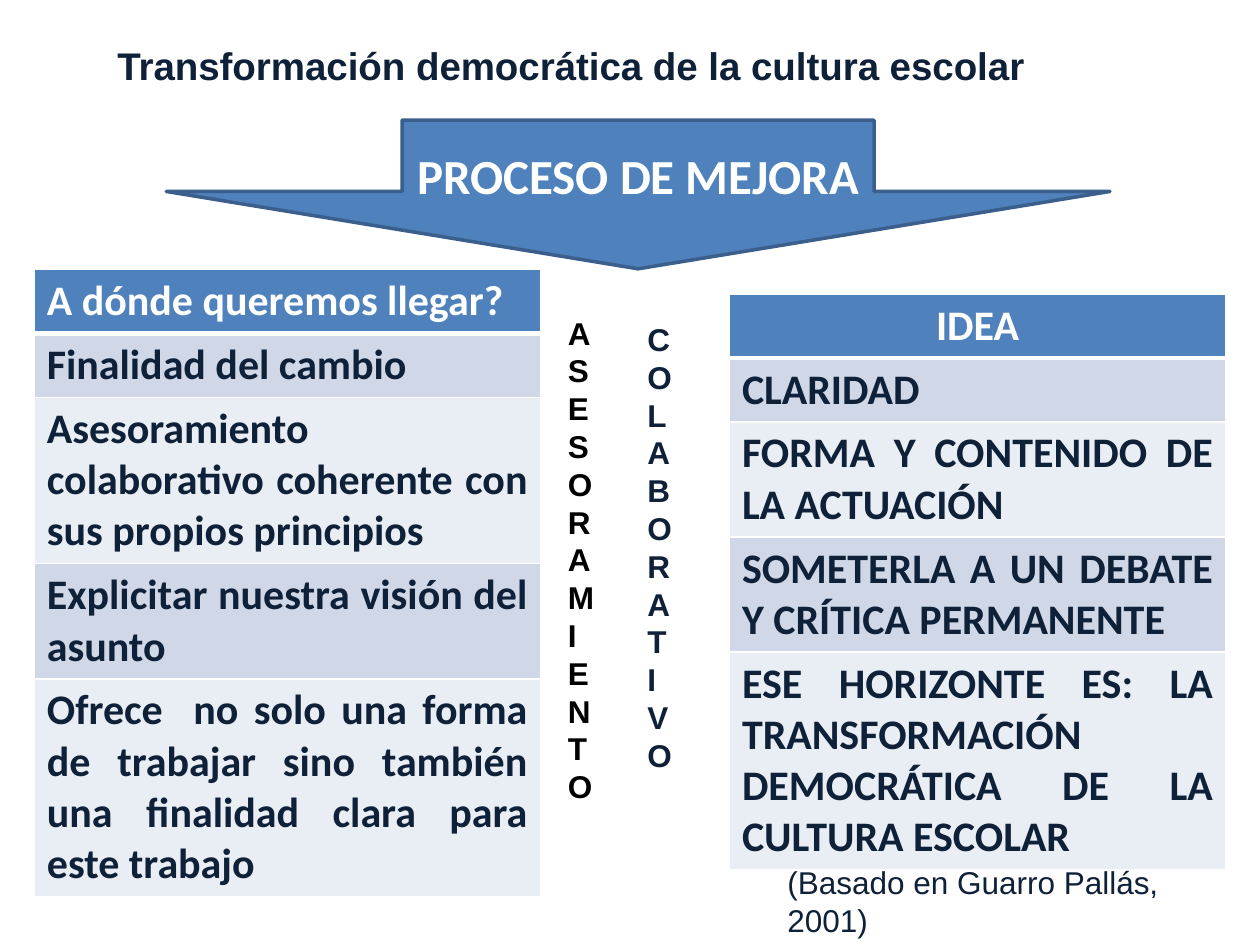
"""Build the slide on the democratic transformation of school culture."""
from lxml.etree import SubElement
from pptx import Presentation
from pptx.dml.color import RGBColor
from pptx.enum.shapes import MSO_SHAPE
from pptx.enum.text import MSO_ANCHOR, MSO_AUTO_SIZE, PP_ALIGN
from pptx.oxml.ns import qn
from pptx.util import Pt

COLORS = {"blue": "4F81BD", "outline": "3A5F8C", "navy": "0E2138", "black": "000000",
          "white": "FFFFFF", "band": "D0D8E8", "light": "E9EDF4"}


def write(text_frame, text, color, align=PP_ALIGN.LEFT, **font_format):
    """Put text in a frame and format each of its paragraphs."""
    text_frame.text = text
    for paragraph in text_frame.paragraphs:
        paragraph.alignment = align
        font = paragraph.runs[0].font
        font.color.rgb = RGBColor.from_string(COLORS[color])
        for name, value in font_format.items():
            setattr(font, name, value)


def add_border(cell, side, width):
    """Draw a white border on one side of a cell."""
    line = SubElement(cell._tc.get_or_add_tcPr(), qn(f"a:ln{side}"), w=str(Pt(width)))
    fill = SubElement(line, qn("a:solidFill"))
    SubElement(fill, qn("a:srgbClr"), val=COLORS["white"])


TITLE_FONT = {"name": "Arial", "size": Pt(22), "bold": True}
ARROW_FONT = {"name": "Calibri", "size": Pt(28), "bold": True}
TABLE_FONT = {"name": "Calibri", "size": Pt(24), "bold": True}
LETTER_FONT = {"name": "Arial", "size": Pt(18), "bold": True}
SOURCE_FONT = {"name": "Arial", "size": Pt(18), "bold": False}

presentation = Presentation()
presentation.slide_width, presentation.slide_height = Pt(720), Pt(540)
slide = presentation.slides.add_slide(presentation.slide_layouts[5])

title = slide.shapes.title
title_format = {"left": Pt(59.8), "top": Pt(20.2), "width": Pt(617.8), "height": Pt(33.8)}
for name, value in title_format.items():
    setattr(title, name, value)
write(title.text_frame, "Transformación democrática de la cultura escolar", "navy",
      PP_ALIGN.JUSTIFY, **TITLE_FONT)
title.text_frame.vertical_anchor = MSO_ANCHOR.TOP
title.text_frame.auto_size = MSO_AUTO_SIZE.NONE

arrow = slide.shapes.add_shape(MSO_SHAPE.DOWN_ARROW, Pt(95), Pt(68.6), Pt(539.3), Pt(85))
arrow.adjustments[0], arrow.adjustments[1] = 0.5, 0.52
arrow.shadow.inherit = False
arrow.fill.solid()
arrow.fill.fore_color.rgb = RGBColor.from_string(COLORS["blue"])
arrow.line.color.rgb = RGBColor.from_string(COLORS["outline"])
arrow.line.width = Pt(2)
write(arrow.text_frame, "PROCESO DE MEJORA", "white", PP_ALIGN.CENTER, **ARROW_FONT)
arrow.text_frame.vertical_anchor = MSO_ANCHOR.MIDDLE

tables = [
    (19.6, 154, 289.2, PP_ALIGN.LEFT, [
        ("A dónde queremos llegar?", 1),
        ("Finalidad del cambio", 1),
        ("Asesoramiento colaborativo coherente con sus propios principios", 3),
        ("Explicitar nuestra visión del asunto", 2),
        ("Ofrece  no solo una forma de trabajar sino también una finalidad clara "
         "para este trabajo", 4)]),
    (416.8, 168, 283.6, PP_ALIGN.CENTER, [
        ("IDEA", 1),
        ("CLARIDAD", 1),
        ("FORMA Y CONTENIDO DE LA ACTUACIÓN", 2),
        ("SOMETERLA A UN DEBATE Y CRÍTICA PERMANENTE", 2),
        ("ESE HORIZONTE ES: LA TRANSFORMACIÓN DEMOCRÁTICA DE LA CULTURA ESCOLAR", 4)]),
]
for left, top, width, header_align, rows in tables:
    heights = [Pt(29 * lines + 6.5) for text, lines in rows]
    table = slide.shapes.add_table(len(rows), 1, Pt(left), Pt(top), Pt(width), sum(heights)).table
    for index, (text, lines) in enumerate(rows):
        table.rows[index].height = heights[index]
        cell = table.cell(index, 0)
        header = index == 0
        write(cell.text_frame, text, "white" if header else "navy",
              header_align if header else PP_ALIGN.JUSTIFY, **TABLE_FONT)
        for side, border in zip("LRTB", (1, 1, 3 if index == 1 else 1, 3 if header else 1)):
            add_border(cell, side, border)
        fill_name = "blue" if header else ("light", "band")[index % 2]
        cell.fill.solid()
        cell.fill.fore_color.rgb = RGBColor.from_string(COLORS[fill_name])

group = slide.shapes.add_group_shape()
for word, left, top, height, color in [("ASESORAMIENTO", 317.5, 175.7, 290.9, "black"),
                                       ("COLABORATIVO", 362.9, 179.3, 266.4, "navy")]:
    column = group.shapes.add_textbox(Pt(left), Pt(top), Pt(31), Pt(height))
    column.text_frame.word_wrap = True
    write(column.text_frame, "\n".join(word), color, **LETTER_FONT)

source = slide.shapes.add_textbox(Pt(442.8), Pt(489.6), Pt(277.2), Pt(50.4))
source.text_frame.word_wrap = False
write(source.text_frame, "(Basado en Guarro Pallás, 2001)", "navy", **SOURCE_FONT)

presentation.save("out.pptx")
